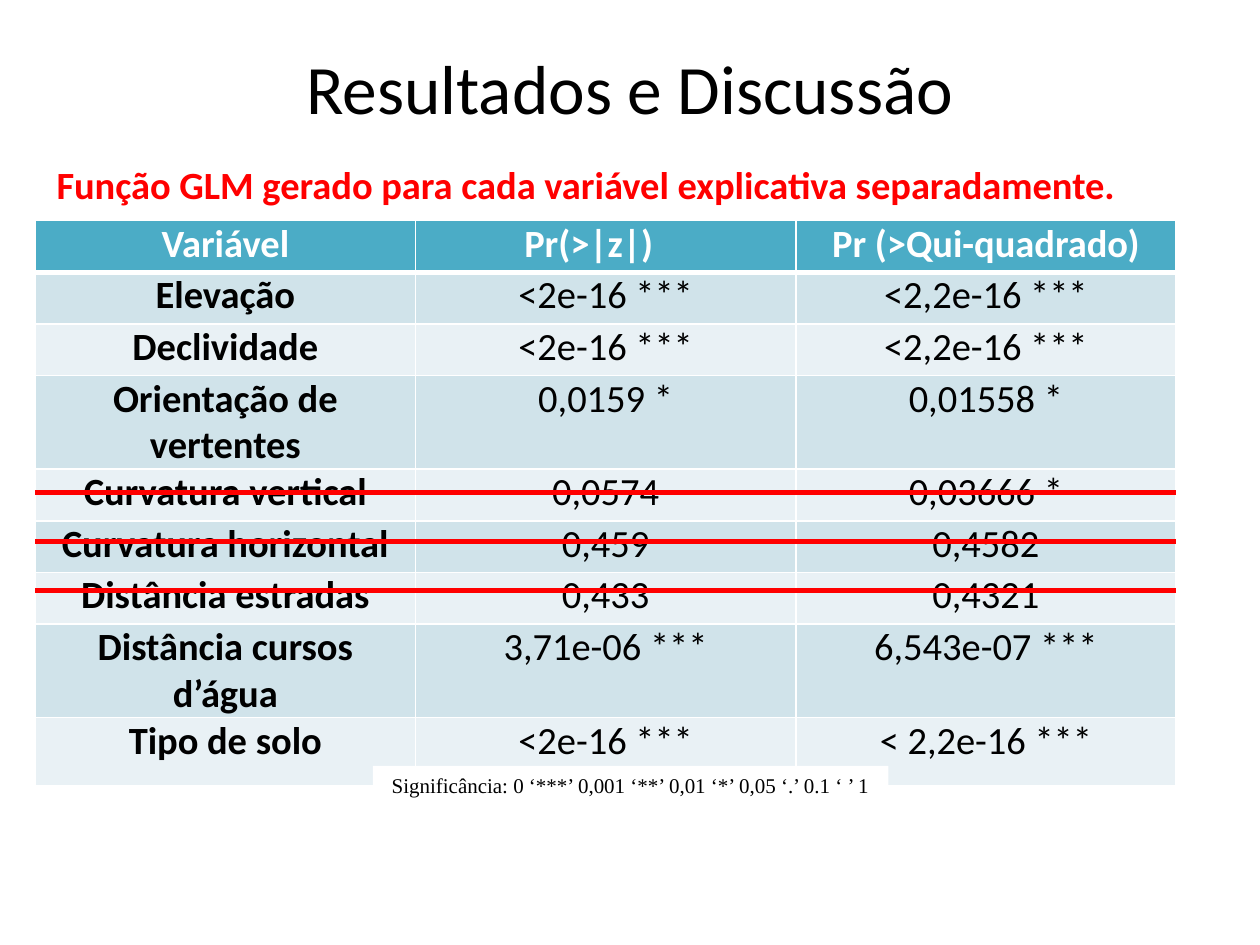
import pptx
import pptx.util
import pptx.dml.color
import pptx.enum.shapes
import pptx.enum.text
import pptx.oxml
import pptx.oxml.ns
from pptx.util import Cm

COLORS = {
    "black": "000000",
    "white": "FFFFFF",
    "red": "FF0000",
    "header": "4BACC6",
    "odd": "D0E3EA",
    "even": "E9F1F5",
}
CENTER = pptx.enum.text.PP_ALIGN.CENTER
LEFT = pptx.enum.text.PP_ALIGN.LEFT
MIDDLE = pptx.enum.text.MSO_ANCHOR.MIDDLE

RESULTS = [
    ("Variável", "Pr(>|z|)", "Pr (>Qui-quadrado)"),
    ("Elevação", "<2e-16 ***", "<2,2e-16 ***"),
    ("Declividade", "<2e-16 ***", "<2,2e-16 ***"),
    ("Orientação de vertentes", "0,0159 *", "0,01558 *"),
    ("Curvatura vertical", "0,0574", "0,03666 *"),
    ("Curvatura horizontal", "0,459", "0,4582"),
    ("Distância estradas", "0,433", "0,4321"),
    ("Distância cursos d’água", "3,71e-06 ***", "6,543e-07 ***"),
    ("Tipo de solo", "<2e-16 ***", "< 2,2e-16 ***"),
]
TABLE_LEFT, TABLE_TOP, TABLE_WIDTH = 0.71, 4.45, 23
ROW_HEIGHT, LAST_ROW_HEIGHT = 1.04, 1.37
STRIKE_TOP, STRIKE_STEP, STRIKE_COUNT = 9.93, 0.99, 3


class SlideBuilder:
    font = "Calibri"
    size = 22

    def __init__(self, page):
        self.page = page

    def color(self, name):
        return pptx.dml.color.RGBColor.from_string(COLORS[name])

    def add_text(self, frame, text, color="black", size=None, bold=False, font=None, align=CENTER):
        para = frame.paragraphs[0]
        para.alignment = align
        span = para.add_run()
        span.text = text
        span.font.name = font or self.font
        span.font.size = pptx.util.Pt(size or self.size)
        span.font.bold = bold
        span.font.color.rgb = self.color(color)
        return para

    def title(self, text, left, top, width, height):
        box = self.page.shapes.title
        box.left, box.top, box.width, box.height = Cm(left), Cm(top), Cm(width), Cm(height)
        box.text_frame.vertical_anchor = MIDDLE
        self.add_text(box.text_frame, text, size=39.6)

    def subtitle(self, text, left, top, width, height):
        box = self.page.shapes.add_textbox(Cm(left), Cm(top), Cm(width), Cm(height))
        box.text_frame.word_wrap = True
        self.add_text(box.text_frame, text, "red", bold=True, align=LEFT)

    def legend(self, text, left, top, width, height):
        box = self.page.shapes.add_shape(
            pptx.enum.shapes.MSO_SHAPE.RECTANGLE, Cm(left), Cm(top), Cm(width), Cm(height))
        box.shadow.inherit = False
        box.fill.solid()
        box.fill.fore_color.rgb = self.color("white")
        box.line.fill.background()
        frame = box.text_frame
        frame.word_wrap = False
        frame.vertical_anchor = MIDDLE
        frame.margin_bottom = 0
        self.add_text(frame, text, size=12, font="Times New Roman")

    def border(self, cell, side, points):
        properties = cell._tc.get_or_add_tcPr()
        properties.append(pptx.oxml.parse_xml(
            f'<a:{side} {pptx.oxml.ns.nsdecls("a")} w="{pptx.util.Pt(points)}">'
            f'<a:solidFill><a:srgbClr val="{COLORS["white"]}"/></a:solidFill></a:{side}>'))

    def cell(self, cell, text, row, column):
        header = row == 0
        cell.margin_left = cell.margin_right = Cm(0.19)
        cell.margin_top = cell.margin_bottom = 0
        for side in ("lnL", "lnR", "lnT", "lnB"):
            thick = (header and side == "lnB") or (row == 1 and side == "lnT")
            self.border(cell, side, 3 if thick else 1)
        cell.fill.solid()
        fill = "header" if header else "odd" if row % 2 else "even"
        cell.fill.fore_color.rgb = self.color(fill)
        para = self.add_text(cell.text_frame, text, "white" if header else "black",
                             bold=header or column == 0)
        if header:
            para.space_after = pptx.util.Pt(6)

    def table(self, rows, left, top, width, row_height, last_height):
        height = row_height * (len(rows) - 1) + last_height
        grid = self.page.shapes.add_table(
            len(rows), len(rows[0]), Cm(left), Cm(top), Cm(width), Cm(height)).table
        for row, texts in enumerate(rows):
            grid.rows[row].height = Cm(row_height)
            for column, text in enumerate(texts):
                self.cell(grid.cell(row, column), text, row, column)
        grid.rows[len(rows) - 1].height = Cm(last_height)
        return grid

    def strike(self, left, right, top):
        line = self.page.shapes.add_connector(
            pptx.enum.shapes.MSO_CONNECTOR.STRAIGHT, Cm(left), Cm(top), Cm(right), Cm(top))
        line.line.color.rgb = self.color("red")
        line.line.width = pptx.util.Pt(3)
        line._element.spPr.append(pptx.oxml.parse_xml(
            f'<a:effectLst {pptx.oxml.ns.nsdecls("a")}/>'))


def main():
    deck = pptx.Presentation()
    deck.slide_width, deck.slide_height = Cm(25.4), Cm(19.05)
    builder = SlideBuilder(deck.slides.add_slide(deck.slide_layouts[5]))
    builder.title("Resultados e Discussão", 1.27, 0.76, 22.86, 1.96)
    grid = builder.table(RESULTS, TABLE_LEFT, TABLE_TOP, TABLE_WIDTH, ROW_HEIGHT, LAST_ROW_HEIGHT)
    grid.cell(0, 1).margin_right = Cm(0.87)
    builder.legend("Significância: 0 ‘***’ 0,001 ‘**’ 0,01 ‘*’ 0,05 ‘.’ 0.1 ‘ ’ 1",
                   7.52, 15.44, 10.39, 0.64)
    builder.subtitle("Função GLM gerado para cada variável explicativa separadamente.",
                     0.89, 3.12, 22.81, 1.19)
    for index in range(STRIKE_COUNT):
        builder.strike(TABLE_LEFT, TABLE_LEFT + TABLE_WIDTH, STRIKE_TOP + index * STRIKE_STEP)
    deck.save("out.pptx")


if __name__ == "__main__":
    main()
